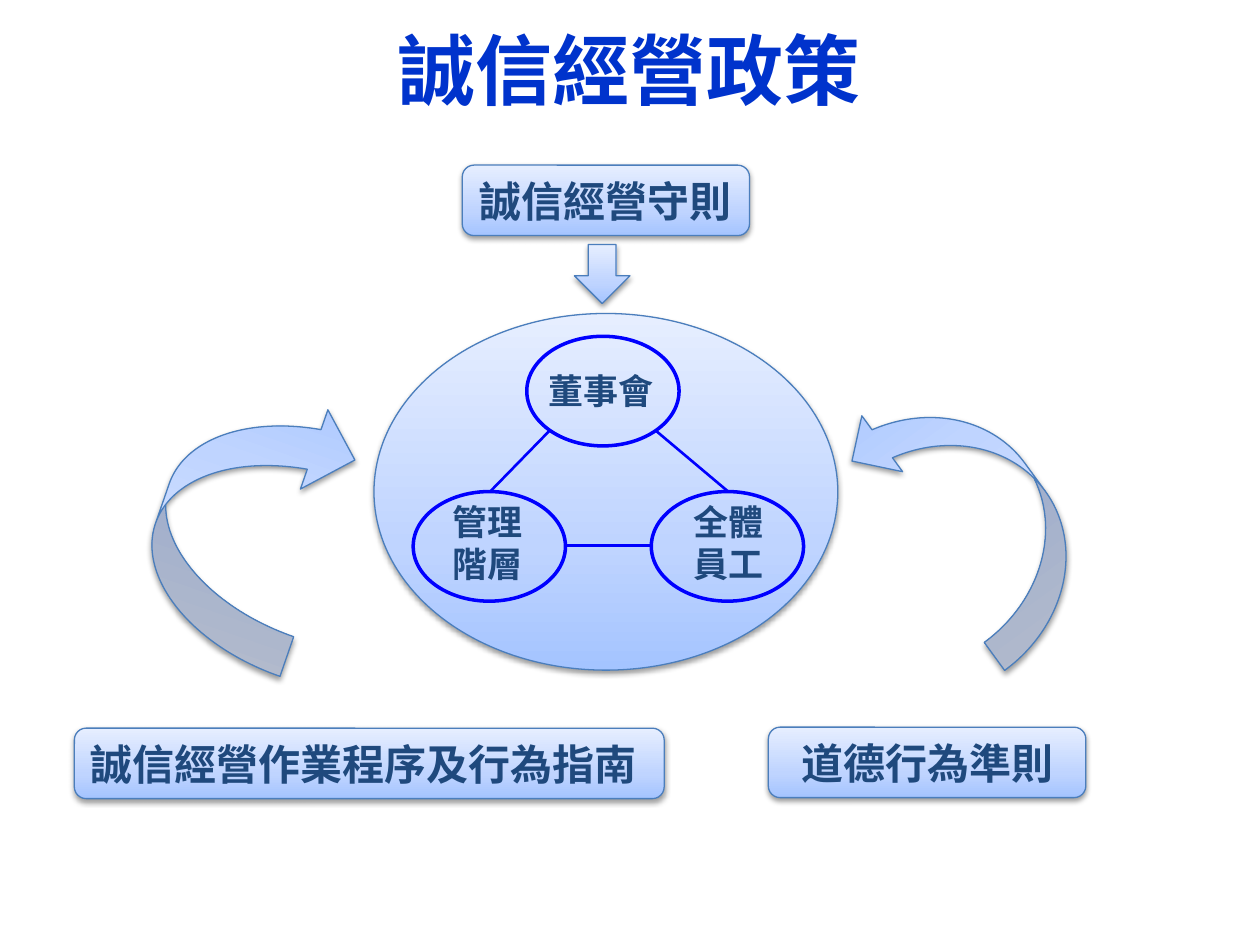
"""Build the integrity policy slide."""
from lxml.etree import SubElement
from pptx import Presentation
from pptx.dml.color import RGBColor
from pptx.enum.shapes import MSO_CONNECTOR as CONN, MSO_SHAPE as SHAPE
from pptx.enum.text import MSO_ANCHOR as ANCHOR, PP_ALIGN as ALIGN
from pptx.oxml.ns import qn
from pptx.util import Cm, Pt

COLORS = {"title": "0033CC", "text": "1F497D", "node": "0000FF", "edge": "4B7EBC", "shadow": "000000"}
GRADIENT = {0: "A4C4FF", 35: "BFD4FF", 100: "E6EEFF"}
FONT = "Noto Sans CJK SC"


def add(parent, tag, **attrs):
    """Append a DrawingML element and return it."""
    return SubElement(parent, qn(tag), {k: str(v) for k, v in attrs.items()})


class Deck:
    """Hold the style and the current slide."""

    def __init__(self):
        """Start a 4:3 deck with one title-only slide."""
        self.prs = Presentation()
        self.prs.slide_width, self.prs.slide_height = Cm(25.4), Cm(19.05)
        self.slide = self.prs.slides.add_slide(self.prs.slide_layouts[5])

    def fill_text(self, tf, lines, size, color="text", align=ALIGN.CENTER, spacing=None):
        """Fill a text frame with one paragraph per line."""
        tf.word_wrap = True
        for i, line in enumerate(lines):
            p = tf.add_paragraph() if i else tf.paragraphs[0]
            p.alignment, p.line_spacing = align, spacing
            r = p.add_run()
            r.text = line
            for key, value in {"name": FONT, "size": Pt(size), "bold": True}.items():
                setattr(r.font, key, value)
            r.font.color.rgb = RGBColor.from_string(COLORS[color])
            add(r._r.get_or_add_rPr(), "a:ea", typeface=FONT)

    def stroke(self, sp, color, width):
        """Set the line of a shape or connector."""
        sp.line.color.rgb = RGBColor.from_string(COLORS[color])
        sp.line.width = Pt(width)

    def title(self, text, box):
        """Place and format the title."""
        sp = self.slide.shapes.title
        for key, value in zip(("left", "top", "width", "height"), box):
            setattr(sp, key, Cm(value))
        tf = sp.text_frame
        margins = {"margin_left": 0, "margin_top": Cm(0.13), "margin_right": 0, "margin_bottom": 0}
        for key, value in {**margins, "vertical_anchor": ANCHOR.MIDDLE}.items():
            setattr(tf, key, value)
        self.fill_text(tf, [text], 44, "title", spacing=Pt(60))

    def panel(self, kind, box, text=None, align=ALIGN.CENTER, rotation=0, flip=False):
        """Add a gradient shape with a soft shadow."""
        sp = self.slide.shapes.add_shape(kind, *map(Cm, box))
        sp.rotation = rotation
        spPr = sp._element.spPr
        if flip:
            spPr.find(qn("a:xfrm")).set("flipH", "1")
        grad = add(spPr, "a:gradFill", rotWithShape=1)
        stops = add(grad, "a:gsLst")
        for pos, color in GRADIENT.items():
            add(add(stops, "a:gs", pos=pos * 1000), "a:srgbClr", val=color)
        add(grad, "a:lin", ang=16200000, scaled=0)
        self.stroke(sp, "edge", 0.75)
        sp.shadow.inherit = False
        shadow = add(spPr.find(qn("a:effectLst")), "a:outerShdw", blurRad=Pt(3.1), dist=Pt(1.6),
                     dir=5400000, rotWithShape=0)
        add(add(shadow, "a:srgbClr", val=COLORS["shadow"]), "a:alpha", val=38000)
        if text:
            self.fill_text(sp.text_frame, [text], 24, align=align)

    def node(self, left, top):
        """Add an outlined ellipse."""
        sp = self.slide.shapes.add_shape(SHAPE.OVAL, *map(Cm, (left, top, 3.07, 2.21)))
        sp.fill.background()
        sp.shadow.inherit = False
        self.stroke(sp, "node", 2)

    def label(self, lines, box):
        """Add a centred text box."""
        self.fill_text(self.slide.shapes.add_textbox(*map(Cm, box)).text_frame, lines, 20)

    def link(self, *ends):
        """Add a straight line between two points."""
        sp = self.slide.shapes.add_connector(CONN.STRAIGHT, *map(Cm, ends))
        self.stroke(sp, "node", 1.5)
        add(sp._element.spPr, "a:effectLst")


def main():
    """Build and save the slide."""
    deck = Deck()
    deck.title("誠信經營政策", (1.27, 0, 22.86, 2.39))
    deck.panel(SHAPE.OVAL, (7.54, 6.32, 9.35, 7.19))
    for node, lines, box in (
        ((10.62, 6.78), ["董事會"], (10.74, 7.32, 2.77, 1.12)),
        ((8.33, 9.91), ["管理", "階層"], (8.38, 9.96, 2.9, 1.96)),
        ((13.13, 9.91), ["全體", "員工"], (13.31, 9.96, 2.77, 1.96)),
    ):
        deck.node(*node)
        deck.label(lines, box)
    for ends in ((11.07, 8.69, 9.88, 9.91), (13.23, 8.69, 14.68, 9.91), (11.4, 11, 13.13, 11)):
        deck.link(*ends)
    for text, box, align in (
        ("誠信經營守則", (9.32, 3.33, 5.79, 1.42), ALIGN.CENTER),
        ("道德行為準則", (15.49, 14.66, 6.4, 1.42), ALIGN.CENTER),
        ("誠信經營作業程序及行為指南", (1.5, 14.68, 11.89, 1.42), ALIGN.LEFT),
    ):
        deck.panel(SHAPE.ROUNDED_RECTANGLE, box, text, align)
    deck.panel(SHAPE.DOWN_ARROW, (11.58, 4.93, 1.12, 1.19))
    deck.panel(SHAPE.CURVED_RIGHT_ARROW, (18.24, 7.34, 2.79, 5.92), rotation=143.9)
    deck.panel(SHAPE.CURVED_RIGHT_ARROW, (3.25, 7.77, 3.38, 5.46), rotation=199.1, flip=True)
    deck.prs.save("out.pptx")


if __name__ == "__main__":
    main()
